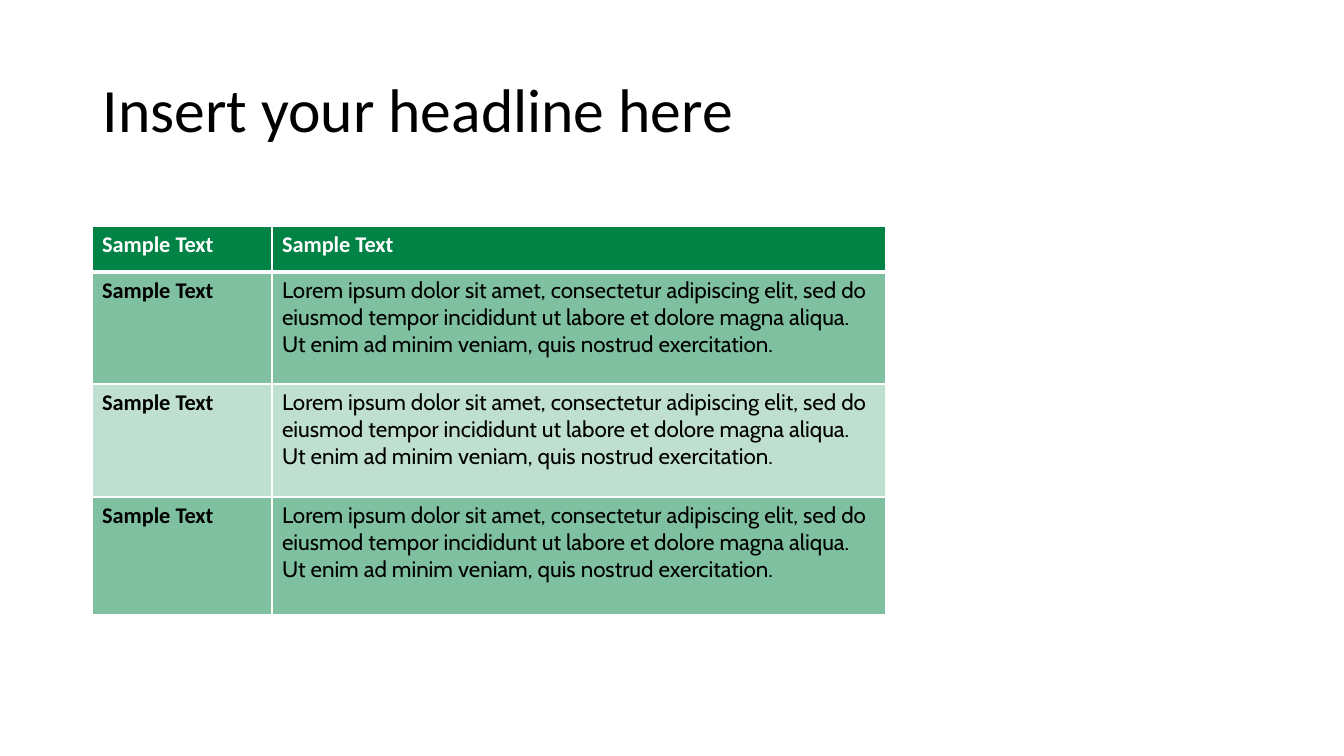
"""Build a headline slide with a green sample table."""
from lxml import etree
from pptx import Presentation
from pptx import util as u
from pptx.dml.color import RGBColor
from pptx.enum import text
from pptx.oxml.ns import qn

PX = 914400 / 100.8
COLORS = {"green": "008345", "white": "FFFFFF", "black": "000000"}
LABEL = "Sample Text"
LOREM = (
    "Lorem ipsum dolor sit amet, consectetur adipiscing elit, sed do eiusmod tempor "
    "incididunt ut labore et dolore magna aliqua. Ut enim ad minim veniam, quis nostrud exercitation."
)


def px(length):
    """Convert pixels to EMU."""
    return u.Emu(round(length * PX))


def style_cell(cell, opacity, widths):
    """Give a cell its translucent green fill and white borders."""
    cell.fill.solid()
    cell.fill.fore_color.rgb = RGBColor.from_string(COLORS["green"])
    properties = cell._tc.get_or_add_tcPr()
    if opacity < 100:
        color = properties.find(f"{qn('a:solidFill')}/{qn('a:srgbClr')}")
        etree.SubElement(color, qn("a:alpha"), val=str(opacity * 1000))
    for index, (side, points) in enumerate(widths.items()):
        line = etree.Element(qn(f"a:ln{side}"), w=str(u.Pt(points)))
        paint = etree.SubElement(line, qn("a:solidFill"))
        etree.SubElement(paint, qn("a:srgbClr"), val=COLORS["white"])
        properties.insert(index, line)


deck = Presentation()
deck.slide_width, deck.slide_height = px(1344), px(756)
page = deck.slides.add_slide(deck.slide_layouts[6])

column_widths = [180, 614]
row_heights = [46, 112, 113, 118]
rows = [(LABEL, LABEL)] + [(LABEL, LOREM)] * 3
opacities = [100, 50, 25, 50]

frame = page.shapes.add_table(
    len(rows), len(column_widths), px(92), px(226), px(sum(column_widths)), px(sum(row_heights))
)
table = frame.table
for column, width in zip(table.columns, column_widths):
    column.width = px(width)

for row_index, (words, height, opacity) in enumerate(zip(rows, row_heights, opacities)):
    table.rows[row_index].height = px(height)
    header = row_index == 0
    widths = {"L": 1, "R": 1, "T": 3 if row_index == 1 else 1, "B": 3 if header else 1}
    for column_index, wording in enumerate(words):
        cell = table.cell(row_index, column_index)
        cell.text_frame.text = wording
        style_cell(cell, opacity, widths)
        label = wording == LABEL
        font = cell.text_frame.paragraphs[0].runs[0].font
        font.name = "Calibri" if label else "Cabin"
        font.size = u.Pt(16)
        font.bold = label
        font.color.rgb = RGBColor.from_string(COLORS["white" if header else "black"])

title = page.shapes.add_textbox(px(93), px(40), px(1159), px(146))
title.text_frame.word_wrap = True
title.text_frame.vertical_anchor = text.MSO_ANCHOR.MIDDLE
title.text_frame.text = "Insert your headline here"
para = title.text_frame.paragraphs[0]
para.line_spacing = 0.9
font = para.runs[0].font
font.name = "Calibri"
font.size = u.Pt(44)
font.color.rgb = RGBColor.from_string(COLORS["black"])

deck.save("out.pptx")
